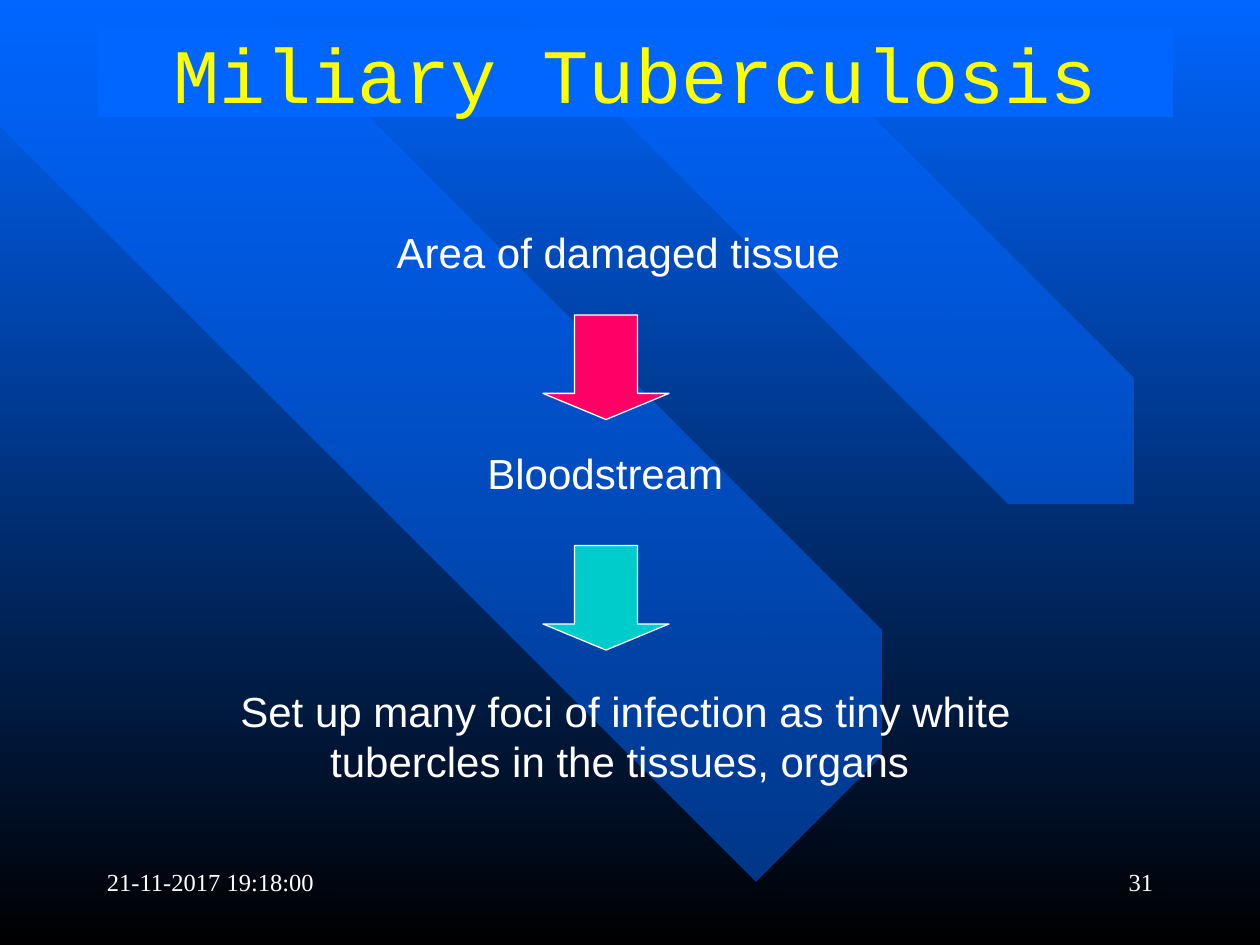
from lxml import etree
from pptx import Presentation
from pptx.dml.color import RGBColor
from pptx.enum.shapes import MSO_SHAPE
from pptx.enum.text import MSO_ANCHOR, MSO_AUTO_SIZE, PP_ALIGN
from pptx.oxml.ns import qn
from pptx.util import Inches, Pt

RECT, ARROW = MSO_SHAPE.RECTANGLE, MSO_SHAPE.DOWN_ARROW
LEFT, MID, RIGHT = PP_ALIGN.LEFT, PP_ALIGN.CENTER, PP_ALIGN.RIGHT
MIDDLE, TOP = MSO_ANCHOR.MIDDLE, MSO_ANCHOR.TOP
GROW, FIXED = MSO_AUTO_SIZE.SHAPE_TO_FIT_TEXT, MSO_AUTO_SIZE.NONE

HUES = {"blue": "0066FF", "black": "000000", "white": "FFFFFF",
        "yellow": "FFFF00", "pink": "FF0066", "teal": "00CCCC"}

# Text formats: font name, size and colour
TITLE = {"name": "Courier New", "size": Pt(44), "hue": "yellow"}
STEP = {"name": "Arial", "size": Pt(24), "hue": "white"}
FOOT = {"name": "Times New Roman", "size": Pt(14), "hue": "white"}

# Diagonal stripes, as corner points in inches
STRIPES = [
    [(6.7, 5.93), (0.79, 0), (0, 0), (0, 0.84), (5.89, 6.75)],
    [(2.14, 0), (7.38, 5.27), (7.06, 5.59), (1.49, 0)],
    [(4.89, 0), (8.76, 3.89), (8.21, 4.44), (3.8, 0)],
    [(5.3, 0), (8.97, 3.68), (9.27, 3.38), (5.91, 0)],
]


def rgb(hue):
    return RGBColor.from_string(HUES[hue])


def paint(shape, hue):
    shape.shadow.inherit = False
    shape.fill.solid()
    shape.fill.fore_color.rgb = rgb(hue)


def set_back(slide):
    fill = slide.background.fill
    fill.gradient()
    fill.gradient_angle = 270
    for stop, hue in zip(fill.gradient_stops, ("blue", "black")):
        stop.color.rgb = rgb(hue)


def add_stripe(slide, points):
    pen = slide.shapes.build_freeform(*points[0], scale=Inches(1))
    pen.add_line_segments(points[1:], close=True)
    stripe = pen.convert_to_shape()
    paint(stripe, "blue")
    stripe.line.fill.background()
    tint = stripe.fill._xPr.find(qn("a:solidFill"))[0]
    etree.SubElement(tint, qn("a:alpha"), val="50000")


def add_arrow(slide, top, hue):
    arrow = slide.shapes.add_shape(
        ARROW, Inches(4.31), Inches(top), Inches(1), Inches(0.83))
    arrow.adjustments[0], arrow.adjustments[1] = 0.5, 0.25
    paint(arrow, hue)
    arrow.line.color.rgb = rgb("white")
    arrow.line.width = Pt(0.75)


def write(shape, text, form, align=LEFT, anchor=TOP, wrap=True, fit=FIXED):
    frame = shape.text_frame
    frame_form = {"word_wrap": wrap, "auto_size": fit,
                  "vertical_anchor": anchor}
    for key, value in frame_form.items():
        setattr(frame, key, value)
    para = frame.paragraphs[0]
    para.alignment = align
    run = para.add_run()
    run.text = text
    for key, value in form.items():
        if key == "hue":
            run.font.color.rgb = rgb(value)
        else:
            setattr(run.font, key, value)


def add_text(slide, box, text, form, **frame_form):
    shape = slide.shapes.add_textbox(*map(Inches, box))
    write(shape, text, form, **frame_form)


def add_title(slide, text):
    bar = slide.shapes.add_shape(
        RECT, Inches(0.78), Inches(0.23), Inches(8.53), Inches(0.7))
    paint(bar, "blue")
    bar.line.fill.background()
    write(bar, text, TITLE, align=MID, anchor=MIDDLE)


def main():
    deck = Presentation()
    deck.slide_width, deck.slide_height = Inches(10), Inches(7.5)
    slide = deck.slides.add_slide(deck.slide_layouts[6])

    # Backdrop
    set_back(slide)
    for points in STRIPES:
        add_stripe(slide, points)

    # Spread of infection, from top to bottom
    add_arrow(slide, 2.5, "pink")
    add_text(slide, (3.05, 1.75, 3.76, 0.5), "Area of damaged tissue",
             STEP, wrap=False, fit=GROW)
    add_text(slide, (3.77, 3.5, 2.09, 0.5), "Bloodstream",
             STEP, wrap=False, fit=GROW)
    add_arrow(slide, 4.33, "teal")
    add_text(slide, (1.33, 5.39, 7.27, 0.91),
             "Set up many foci of infection as tiny white "
             "tubercles in the tissues, organs ",
             STEP, align=MID, fit=GROW)

    # Title and footer
    add_title(slide, "Miliary Tuberculosis")
    add_text(slide, (0.75, 6.83, 2.08, 0.5), "21-11-2017 19:18:00", FOOT)
    add_text(slide, (7.17, 6.83, 2.08, 0.5), "31", FOOT, align=RIGHT)

    deck.save("out.pptx")


if __name__ == "__main__":
    main()
